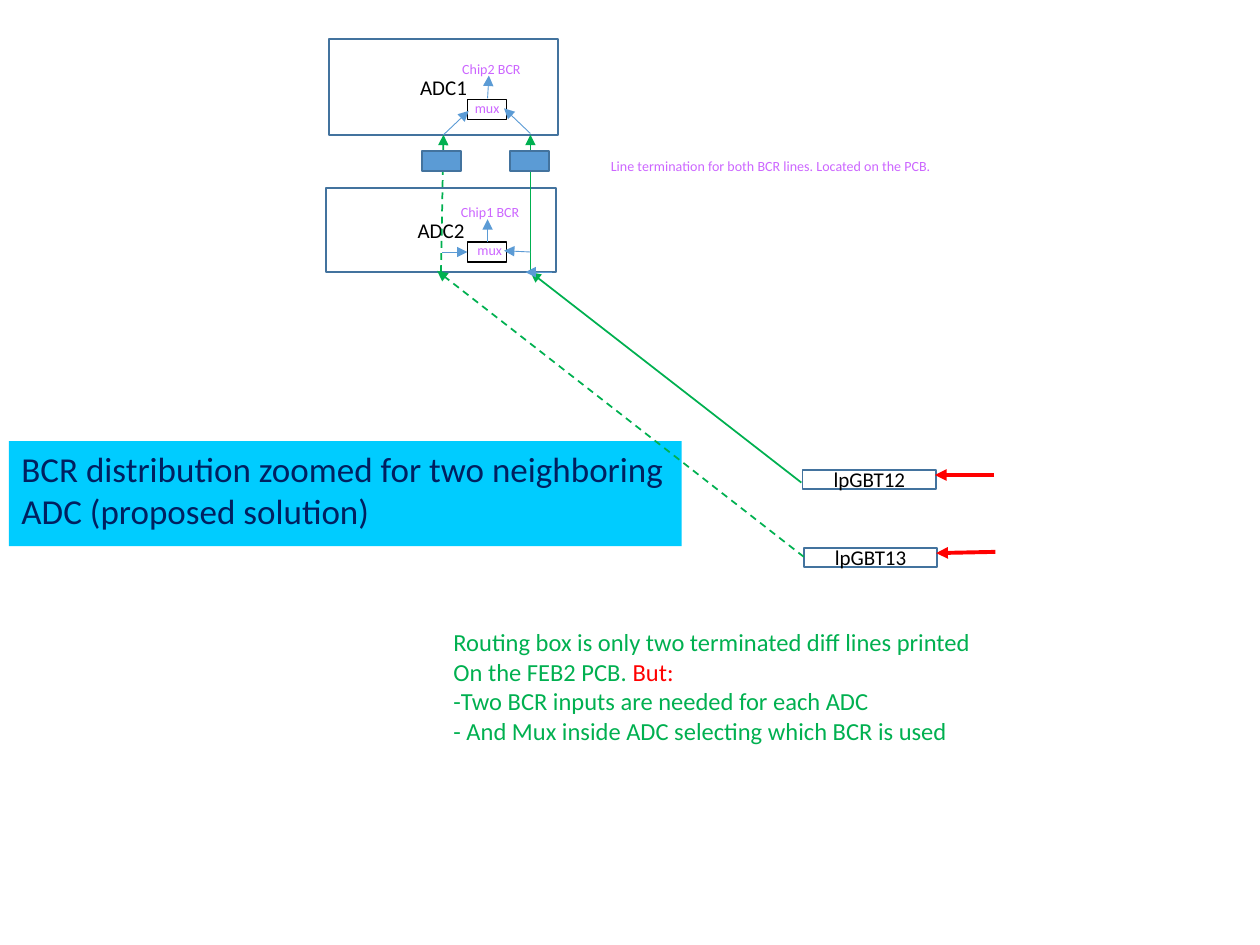
from lxml import etree
from pptx import Presentation
from pptx.dml.color import RGBColor
from pptx.enum import dml, shapes, text
from pptx.oxml import ns
from pptx.util import Inches, Pt

NAVY = RGBColor(0x00, 0x20, 0x60)
CYAN = RGBColor(0x00, 0xCC, 0xFF)
EDGE = RGBColor(0x43, 0x73, 0x9E)
BLUE = RGBColor(0x5B, 0x9B, 0xD5)
GREEN = RGBColor(0x00, 0xB0, 0x50)
RED = RGBColor(0xFF, 0x00, 0x00)
PINK = RGBColor(0xCC, 0x66, 0xFF)
BLACK = RGBColor(0x00, 0x00, 0x00)
WHITE = RGBColor(0xFF, 0xFF, 0xFF)

deck = Presentation()
deck.slide_width, deck.slide_height = Inches(10), Inches(7.5)
slide = deck.slides.add_slide(deck.slide_layouts[5])
parts = slide.shapes


def write(shape, lines, size, align=text.PP_ALIGN.LEFT, anchor=text.MSO_ANCHOR.TOP,
          wrap=False, fit=text.MSO_AUTO_SIZE.SHAPE_TO_FIT_TEXT):
    """Fill a shape with lines, each a list of (words, colour) runs."""
    frame = shape.text_frame
    frame.word_wrap, frame.auto_size, frame.vertical_anchor = wrap, fit, anchor
    for i, line in enumerate(lines):
        para = frame.add_paragraph() if i else frame.paragraphs[0]
        para.alignment = align
        for words, color in line:
            run = para.add_run()
            run.text = words
            look = {"name": "Calibri", "size": Pt(size), "bold": False}
            for key, value in look.items():
                setattr(run.font, key, value)
            run.font.color.rgb = color


def wire(x1, y1, x2, y2, color, width, dash=None):
    """Draw an arrow that points at its end."""
    line = parts.add_connector(shapes.MSO_CONNECTOR.STRAIGHT,
                               Inches(x1), Inches(y1), Inches(x2), Inches(y2))
    line.line.color.rgb = color
    line.line.width = Pt(width)
    if dash:
        line.line.dash_style = dash
    etree.SubElement(line.line._get_or_add_ln(), ns.qn("a:tailEnd"), type="triangle")
    etree.SubElement(line._element.spPr, ns.qn("a:effectLst"))


# Title band
title = parts.title
place = {"left": 0.07, "top": 3.5, "width": 5.34, "height": 0.77}
for key, value in place.items():
    setattr(title, key, Inches(value))
title.fill.solid()
title.fill.fore_color.rgb = CYAN
write(title, [[("BCR distribution zoomed for two neighboring", NAVY)],
              [("ADC (proposed solution)", NAVY)]], 20)

# Chips, terminators and muxes
boxes = [
    ("ADC1", 2.61, 0.31, 1.82, 0.76, None, EDGE),
    ("ADC2", 2.59, 1.49, 1.82, 0.67, None, EDGE),
    ("lpGBT12", 6.37, 3.73, 1.06, 0.15, None, EDGE),
    ("lpGBT13", 6.38, 4.35, 1.06, 0.15, None, EDGE),
    ("", 4.05, 1.2, 0.31, 0.16, BLUE, EDGE),
    ("", 3.35, 1.2, 0.31, 0.16, BLUE, EDGE),
    ("", 3.71, 1.92, 0.31, 0.16, WHITE, BLACK),
    ("", 3.71, 0.79, 0.31, 0.16, WHITE, BLACK),
]
# Green BCR lines and red inputs lie below the terminators
dash = dml.MSO_LINE.DASH
runs = [
    (7.89, 3.77, 7.42, 3.77, RED, 2.25),
    (7.9, 4.38, 7.43, 4.39, RED, 2.25),
    (4.21, 2.16, 4.21, 1.07, GREEN, 1),
    (3.5, 2.16, 3.52, 1.07, GREEN, 1, dash),
    (6.36, 3.83, 4.21, 2.16, GREEN, 1),
    (6.38, 4.42, 3.47, 2.15, GREEN, 1, dash),
]
for i, (name, x, y, w, h, fill, edge) in enumerate(boxes):
    if i == 4:
        for run in runs:
            wire(*run)
    box = parts.add_shape(shapes.MSO_SHAPE.RECTANGLE,
                          Inches(x), Inches(y), Inches(w), Inches(h))
    box.shadow.inherit = False
    box.line.color.rgb = edge
    box.line.width = Pt(1)
    if fill is None:
        box.fill.background()
    else:
        box.fill.solid()
        box.fill.fore_color.rgb = fill
    if name:
        write(box, [[(name, BLACK)]], 12, text.PP_ALIGN.CENTER,
              text.MSO_ANCHOR.MIDDLE, True, text.MSO_AUTO_SIZE.NONE)

# Blue branches to and from the muxes
for ends in [(3.51, 2, 3.71, 2), (4.21, 2, 4, 1.99), (3.87, 1.92, 3.87, 1.74),
             (3.52, 1.07, 3.72, 0.88), (4.21, 1.06, 4, 0.86),
             (3.87, 0.78, 3.88, 0.6), (4.38, 2.16, 4.17, 2.16)]:
    wire(*ends, BLUE, 0.5)

# Small labels and the closing note
notes = [
    (3.69, 1.87, 0.4, 0.24, 8, [[("mux", PINK)]]),
    (3.67, 0.74, 0.4, 0.24, 8, [[("mux", PINK)]]),
    (3.56, 1.57, 0.67, 0.24, 8, [[("Chip1 BCR", PINK)]]),
    (3.57, 0.43, 0.67, 0.24, 8, [[("Chip2 BCR", PINK)]]),
    (4.75, 1.2, 2.77, 0.24, 8,
     [[("Line termination for both BCR lines. Located on the PCB.", PINK)]]),
    (3.5, 4.93, 4.35, 1.28, 14,
     [[("Routing box is only two terminated diff lines printed", GREEN)],
      [("On the FEB2 PCB. ", GREEN), ("But:", RED)],
      [("-Two BCR inputs are needed for each ADC", GREEN)],
      [("- And Mux inside ADC selecting which BCR is used", GREEN)]]),
]
for x, y, w, h, size, lines in notes:
    note = parts.add_textbox(Inches(x), Inches(y), Inches(w), Inches(h))
    write(note, lines, size)

deck.save("out.pptx")
